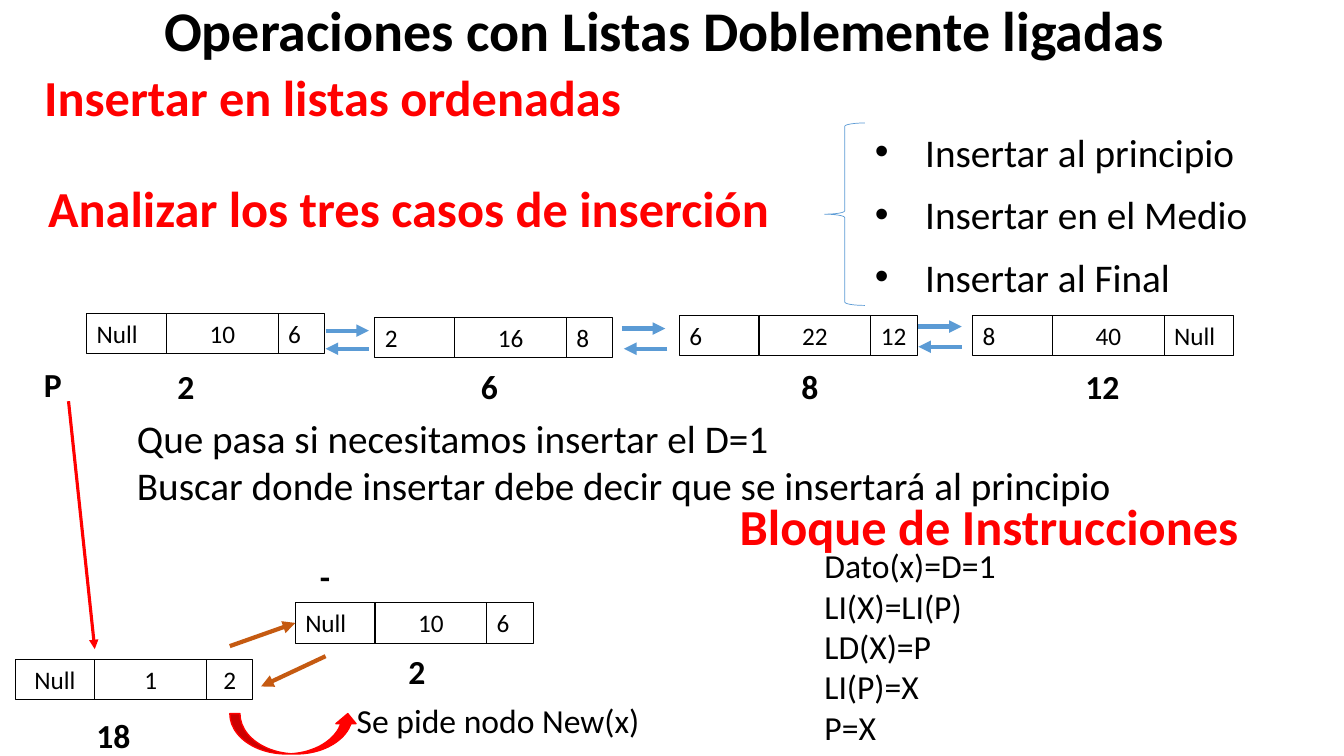
import pptx
import pptx.dml.color
import pptx.enum.shapes
import pptx.enum.text
import pptx.oxml.ns
import pptx.util
from lxml import etree

SHAPES = pptx.enum.shapes.MSO_SHAPE
ALIGN = pptx.enum.text.PP_ALIGN
COLORS = {
    "text": "000000",
    "accent": "FF0000",
    "link": "5B9BD5",
    "insertion": "C55A11",
}
FONT = "Calibri"
COLUMNS, ROWS = 133.33, 75
NODE_HEIGHT = 4
FIELD_WIDTHS = (7.9, 11.1, 4.6)
FIELD_ALIGNS = (ALIGN.LEFT, ALIGN.CENTER, ALIGN.LEFT)


class ListSlide:
    def __init__(self, presentation):
        self.column = presentation.slide_width / COLUMNS
        self.row = presentation.slide_height / ROWS
        self.slide = presentation.slides.add_slide(presentation.slide_layouts[6])

    def place(self, *lengths):
        units = (self.column, self.row) * 2
        return [pptx.util.Emu(round(length * unit)) for length, unit in zip(lengths, units)]

    def color(self, name):
        return pptx.dml.color.RGBColor.from_string(COLORS[name])

    def fill_text(self, shape, lines, size, color="text", bold=False, align=ALIGN.LEFT, bullet=False):
        frame = shape.text_frame
        frame.word_wrap = True
        frame.auto_size = pptx.enum.text.MSO_AUTO_SIZE.SHAPE_TO_FIT_TEXT
        frame.vertical_anchor = pptx.enum.text.MSO_ANCHOR.TOP
        for index, line in enumerate(lines):
            paragraph = frame.add_paragraph() if index else frame.paragraphs[0]
            paragraph.alignment = align
            if bullet:
                self.add_bullet(paragraph)
            run = paragraph.add_run()
            run.text = line
            run.font.name = FONT
            run.font.size = pptx.util.Pt(size)
            run.font.bold = bold
            run.font.color.rgb = self.color(color)

    def add_bullet(self, paragraph):
        properties = paragraph._p.get_or_add_pPr()
        indent = pptx.util.Inches(0.5)
        properties.set("marL", str(indent))
        properties.set("indent", str(-indent))
        bullet_font = etree.SubElement(properties, pptx.oxml.ns.qn("a:buFont"))
        bullet_font.set("typeface", "Arial")
        etree.SubElement(properties, pptx.oxml.ns.qn("a:buChar")).set("char", "•")

    def text(self, left, top, width, height, lines, size, **style):
        box = self.slide.shapes.add_textbox(*self.place(left, top, width, height))
        self.fill_text(box, lines, size, **style)

    def heading(self, left, top, width, line):
        self.text(left, top, width, 7.1, [line], 36, color="accent", bold=True)

    def label(self, left, top, line):
        self.text(left, top, 7.1, 5, [line], 24, bold=True, align=ALIGN.CENTER)

    def shape(self, kind, left, top, width, height, line, weight, fill=None):
        shape = self.slide.shapes.add_shape(kind, *self.place(left, top, width, height))
        shape.shadow.inherit = False
        shape.line.color.rgb = self.color(line)
        shape.line.width = pptx.util.Pt(weight)
        if fill:
            shape.fill.solid()
            shape.fill.fore_color.rgb = self.color(fill)
        else:
            shape.fill.background()
        return shape

    def node(self, left, top, values, widths=FIELD_WIDTHS, aligns=FIELD_ALIGNS):
        fields = []
        for value, width, align in zip(values, widths, aligns):
            field = self.shape(SHAPES.RECTANGLE, left, top, width, NODE_HEIGHT, "text", 0.75)
            self.fill_text(field, [value], 18, align=align)
            fields.append(field)
            left += width
        return fields

    def arrow(self, start, end, color, weight=3):
        connector = self.slide.shapes.add_connector(
            pptx.enum.shapes.MSO_CONNECTOR.STRAIGHT, *self.place(*start, *end))
        connector.line.color.rgb = self.color(color)
        connector.line.width = pptx.util.Pt(weight)
        line = connector.line._get_or_add_ln()
        etree.SubElement(line, pptx.oxml.ns.qn("a:tailEnd")).set("type", "triangle")
        etree.SubElement(connector._element.spPr, pptx.oxml.ns.qn("a:effectLst"))
        return connector


def main():
    presentation = pptx.Presentation()
    presentation.slide_width = pptx.util.Inches(13.33)
    presentation.slide_height = pptx.util.Inches(7.5)
    page = ListSlide(presentation)

    page.text(15.3, -0.9, 109.4, 7.7, ["Operaciones con Listas Doblemente ligadas"], 40, bold=True)
    page.heading(3.4, 6.1, 66.8, "Insertar en listas ordenadas")
    page.heading(3.8, 17.1, 100.3, "Analizar los tres casos de inserción")
    page.text(12.6, 40.6, 112.4, 10.4, [
        "Que pasa si necesitamos insertar el D=1",
        "Buscar donde insertar debe decir que se insertará al principio",
    ], 28)

    cases = ("Insertar al principio", "Insertar en el Medio", "Insertar al Final")
    for index, case in enumerate(cases):
        page.text(85.8, 12.2 + 6.2 * index, 44, 5.7, [case], 28, bullet=True)
    page.shape(SHAPES.LEFT_BRACE, 81.8, 12.2, 4, 18.1, "link", 0.5)

    last_widths = (*FIELD_WIDTHS[:2], 6.9)
    ordered_list = (
        (8.6, 31.1, ("Null", "10", "6"), FIELD_WIDTHS, 14.9, "2"),
        (37.2, 31.5, ("2", "16", "8"), FIELD_WIDTHS, 45, "6"),
        (67.4, 31.3, ("6", "22", "12"), FIELD_WIDTHS, 76.8, "8"),
        (96.5, 31.3, ("8", "40", "Null"), last_widths, 105.8, "12"),
    )
    for left, top, values, widths, label_left, address in ordered_list:
        page.node(left, top, values, widths)
        page.label(label_left, 35.8, address)

    link_length = 4.3
    for left, next_top, back_left, back_top in (
        (32.3, 32.8, 32.3, 34.6),
        (61.7, 32.6, 61.9, 34.6),
        (91.1, 32.4, 91.1, 34.4),
    ):
        page.arrow((left, next_top), (left + link_length, next_top), "link")
        page.arrow((back_left + link_length, back_top), (back_left, back_top), "link")

    first_field = page.node(29.3, 59.8, ("Null", "10", "6"))[0]
    page.node(1.5, 65.4, ("Null", "1", "2"), aligns=(ALIGN.CENTER,) * 3)
    for left, top, line in (
        (1.7, 35.6, "P"),
        (37.8, 64.1, "2"),
        (7.7, 70.4, "18"),
        (28.7, 54.7, "-"),
    ):
        page.label(left, top, line)

    page.text(34.4, 68.9, 36.8, 5, ["Se pide nodo New(x)"], 24)
    page.shape(SHAPES.CURVED_UP_ARROW, 22.8, 70.8, 12.7, 4, "accent", 1, fill="accent")
    page.arrow((6.8, 39.8), (9.4, 64.4), "accent", 2.25)
    page.arrow((22.8, 64.1), (29.3, 61.8), "insertion").end_connect(first_field, 1)
    page.arrow((32.3, 65.1), (25.9, 68.1), "insertion")

    page.heading(72.4, 48.6, 66.8, "Bloque de Instrucciones")
    page.text(80.8, 53.6, 20, 21.2, [
        "Dato(x)=D=1", "LI(X)=LI(P)", "LD(X)=P", "LI(P)=X", "P=X",
    ], 24)

    presentation.save("out.pptx")


if __name__ == "__main__":
    main()
